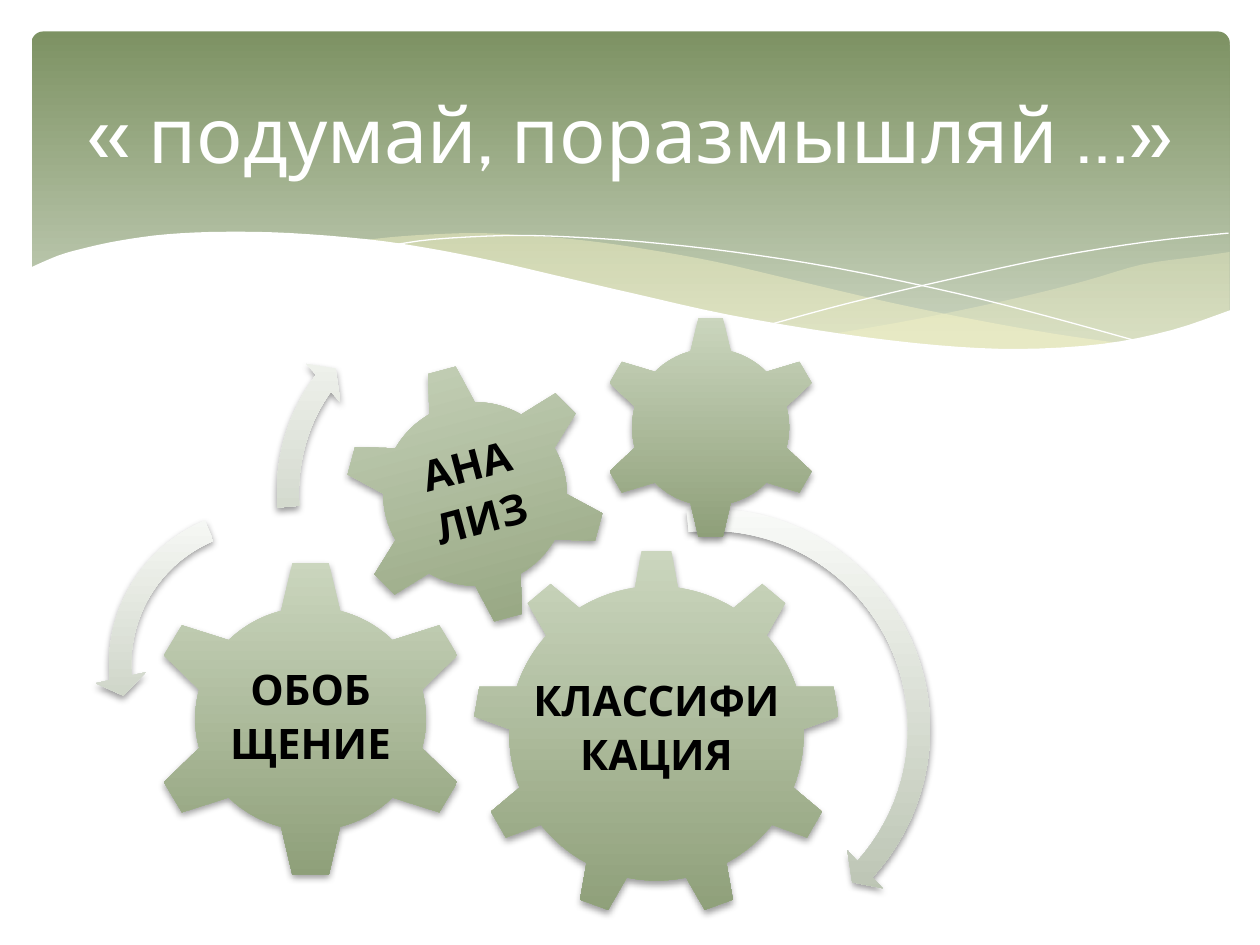
from lxml import etree
from pptx import Presentation
from pptx.dml.color import RGBColor
from pptx.enum.shapes import MSO_SHAPE as SHAPE
from pptx.enum.text import MSO_ANCHOR as ANCHOR, PP_ALIGN as ALIGN
from pptx.oxml.ns import qn
from pptx.util import Inches, Pt

FONT = "Cabin"
GEAR_FILL = ("CBD6BE", "8E9F79")
ARROW_FILL = ("FBFCFA", "B1BBA7")

# Wave edges, in inches from the top left of the header
RIGHT_TOP = [(9.51, 1.75), (9.23, 1.79), (8.81, 1.85), (8.36, 1.98),
             (7.8, 2.12), (7.04, 2.28), (6.36, 2.4)]
RIGHT_BOTTOM = [(6.36, 2.4), (6.8, 2.46), (7.2, 2.5), (7.67, 2.52), (8.1, 2.52),
                (8.56, 2.48), (8.96, 2.4), (9.24, 2.32), (9.51, 2.22)]
MIDDLE_TOP = [(8.68, 2.48), (8.12, 2.4), (7.5, 2.29), (6.81, 2.15), (6.04, 1.97),
              (5.44, 1.83), (4.89, 1.73), (4.4, 1.66), (3.95, 1.62), (3.55, 1.6),
              (3.19, 1.61), (2.88, 1.63), (2.61, 1.66)]
MIDDLE_BOTTOM = [(2.61, 1.66), (2.98, 1.71), (3.37, 1.78), (3.79, 1.86),
                 (4.24, 1.97), (5.05, 2.15), (5.76, 2.3), (6.4, 2.41),
                 (6.97, 2.49), (7.48, 2.52), (7.93, 2.53), (8.42, 2.51), (8.68, 2.48)]
FALLING_LINE = [(2.84, 1.7), (3.19, 1.65), (3.76, 1.62), (4.25, 1.63), (4.85, 1.67),
                (5.57, 1.75), (6.4, 1.88), (7.35, 2.08), (8.06, 2.26), (8.82, 2.47)]
RISING_LINE = [(5.88, 2.32), (6.47, 2.16), (7.23, 1.98), (8.11, 1.79),
               (8.85, 1.67), (9.5, 1.6)]
WHITE_EDGE = [(9.52, 2.21), (9.05, 2.37), (8.5, 2.48), (7.84, 2.52), (7.19, 2.49),
              (6.43, 2.4), (5.54, 2.25), (4.78, 2.08), (4.22, 1.95), (3.66, 1.82),
              (3.15, 1.72), (2.67, 1.65), (2.05, 1.6), (1.52, 1.59), (1.07, 1.61),
              (0.7, 1.66), (0.42, 1.72), (0.21, 1.78), (-0.02, 1.88)]


def color(hex_code):
    return RGBColor.from_string(hex_code)


def fill_gradient(sp, colors, end=1.0):
    """Vertical gradient from the first colour to the second, without outline."""
    sp.fill.gradient()
    sp.fill.gradient_angle = 270
    for stop, c, pos in zip(sp.fill.gradient_stops, colors, (0, end)):
        stop.color.rgb = color(c)
        stop.position = pos
    sp.line.fill.background()
    sp.shadow.inherit = False


def add_shadow(sp):
    effects = sp._element.spPr.find(qn("a:effectLst"))
    shadow = etree.SubElement(effects, qn("a:outerShdw"), blurRad=str(Pt(4)),
                              dist=str(Pt(2)), dir="5400000", rotWithShape="0")
    black = etree.SubElement(shadow, qn("a:srgbClr"), val="000000")
    etree.SubElement(black, qn("a:alpha"), val="38000")


def smooth(points, steps=4):
    """Catmull-Rom curve through the points."""
    padded = [points[0], *points, points[-1]]
    curve = [points[0]]
    for a, b, c, d in zip(padded, padded[1:], padded[2:], padded[3:]):
        for t in (i / steps for i in range(1, steps + 1)):
            curve.append(tuple(
                (2 * q + (r - p) * t + (2 * p - 5 * q + 4 * r - s) * t ** 2
                 + (3 * q - p - 3 * r + s) * t ** 3) / 2
                for p, q, r, s in zip(a, b, c, d)))
    return curve


def add_wave(slide, x, y, points, fill=None, opacity=100):
    """Filled wave, or a thin white line when no fill is given."""
    pts = [(Inches(x + px), Inches(y + py)) for px, py in points]
    builder = slide.shapes.build_freeform(*pts[0])
    builder.add_line_segments(pts[1:], close=fill is not None)
    sp = builder.convert_to_shape()
    sp.shadow.inherit = False
    if fill is None:
        sp.fill.background()
        sp.line.color.rgb = color("FFFFFF")
        sp.line.width = Pt(0)
        return
    sp.fill.solid()
    sp.fill.fore_color.rgb = color(fill)
    sp.line.fill.background()
    if opacity < 100:
        rgb = sp._element.spPr.find(qn("a:solidFill"))[0]
        etree.SubElement(rgb, qn("a:alpha"), val=str(opacity * 1000))


def add_header(slide, x, y, w, h, title):
    # Green panel
    panel = slide.shapes.add_shape(SHAPE.ROUNDED_RECTANGLE, Inches(x), Inches(y),
                                   Inches(w), Inches(h))
    panel.adjustments[0] = 0.034
    fill_gradient(panel, ("7D9263", "C9D3BE"), 0.9)

    # Waves and lines
    add_wave(slide, x, y, smooth(RIGHT_TOP) + smooth(RIGHT_BOTTOM), "FEFAC9", 29)
    add_wave(slide, x, y, smooth(MIDDLE_TOP) + smooth(MIDDLE_BOTTOM), "FEFAC9", 40)
    add_wave(slide, x, y, smooth(FALLING_LINE))
    add_wave(slide, x, y, smooth(RISING_LINE))
    add_wave(slide, x, y, smooth(WHITE_EDGE) + [(-0.02, 3.04), (9.52, 3.04)], "FFFFFF")

    # Title
    box = slide.shapes.add_textbox(Inches(x + 0.25), Inches(y + 0.12),
                                   Inches(w - 0.51), Inches(1.37))
    tf = box.text_frame
    tf.word_wrap = True
    tf.vertical_anchor = ANCHOR.MIDDLE
    p = tf.paragraphs[0]
    p.text = title
    p.alignment = ALIGN.CENTER
    p.font.name, p.font.size = FONT, Pt(44)
    p.font.color.rgb = color("FFFFFF")


def add_part(slide, kind, x, y, w, h, colors):
    sp = slide.shapes.add_shape(kind, Inches(x), Inches(y), Inches(w), Inches(h))
    fill_gradient(sp, colors)
    add_shadow(sp)
    return sp


def add_gear(slide, kind, x, y, w, h, lines=(), rotation=0):
    sp = add_part(slide, kind, x, y, w, h, GEAR_FILL)
    sp.rotation = rotation
    tf = sp.text_frame
    tf.word_wrap = False
    tf.vertical_anchor = ANCHOR.MIDDLE
    tf.margin_left = tf.margin_right = tf.margin_top = tf.margin_bottom = Inches(0.03)
    for i, line in enumerate(lines):
        p = tf.add_paragraph() if i else tf.paragraphs[0]
        p.text = line
        p.alignment = ALIGN.CENTER
        p.line_spacing, p.space_after = 0.9, Pt(5)
        p.font.name, p.font.size, p.font.bold = FONT, Pt(24), True
        p.font.color.rgb = color("000000")


def add_gears(slide, x, y):
    # Labelled gears
    add_gear(slide, SHAPE.GEAR_9, x + 3, y + 2.03, 2.92, 2.92, ("КЛАССИФИ", "КАЦИЯ"))
    add_gear(slide, SHAPE.GEAR_6, x + 0.42, y + 2.11, 2.59, 2.53, ("ОБОБ", "ЩЕНИЕ"))
    add_gear(slide, SHAPE.GEAR_6, x + 1.98, y + 0.55, 2.08, 2.08, ("АНА", "ЛИЗ"), 345)

    # Arrows showing the turning direction
    arrows = [
        (SHAPE.CIRCULAR_ARROW, 3.02, 1.59, 3.73, 3.73, (0.047, 2.99, 25.3, 158.32, 0.055)),
        (SHAPE.LEFT_CIRCULAR_ARROW, 0, 1.59, 2.71, 2.71,
         (0.065, 4.3, 104.89, 148.38, 0.075)),
        (SHAPE.CIRCULAR_ARROW, 1.33, 0, 2.92, 3.17, (0.06, 3.94, 133.14, 105.08, 0.07)),
    ]
    for kind, dx, dy, w, h, adjustments in arrows:
        sp = add_part(slide, kind, x + dx, y + dy, w, h, ARROW_FILL)
        for i, value in enumerate(adjustments):
            sp.adjustments[i] = value

    # Unlabelled gear
    add_gear(slide, SHAPE.GEAR_6, x + 4, y + 0.17, 1.78, 1.78)


def main():
    prs = Presentation()
    prs.slide_width, prs.slide_height = Inches(10), Inches(7.5)
    slide = prs.slides.add_slide(prs.slide_layouts[6])
    add_header(slide, 0.25, 0.25, 9.51, 2.7, "« подумай, поразмышляй …»")
    add_gears(slide, 0.75, 2.33)
    prs.save("out.pptx")


if __name__ == "__main__":
    main()
